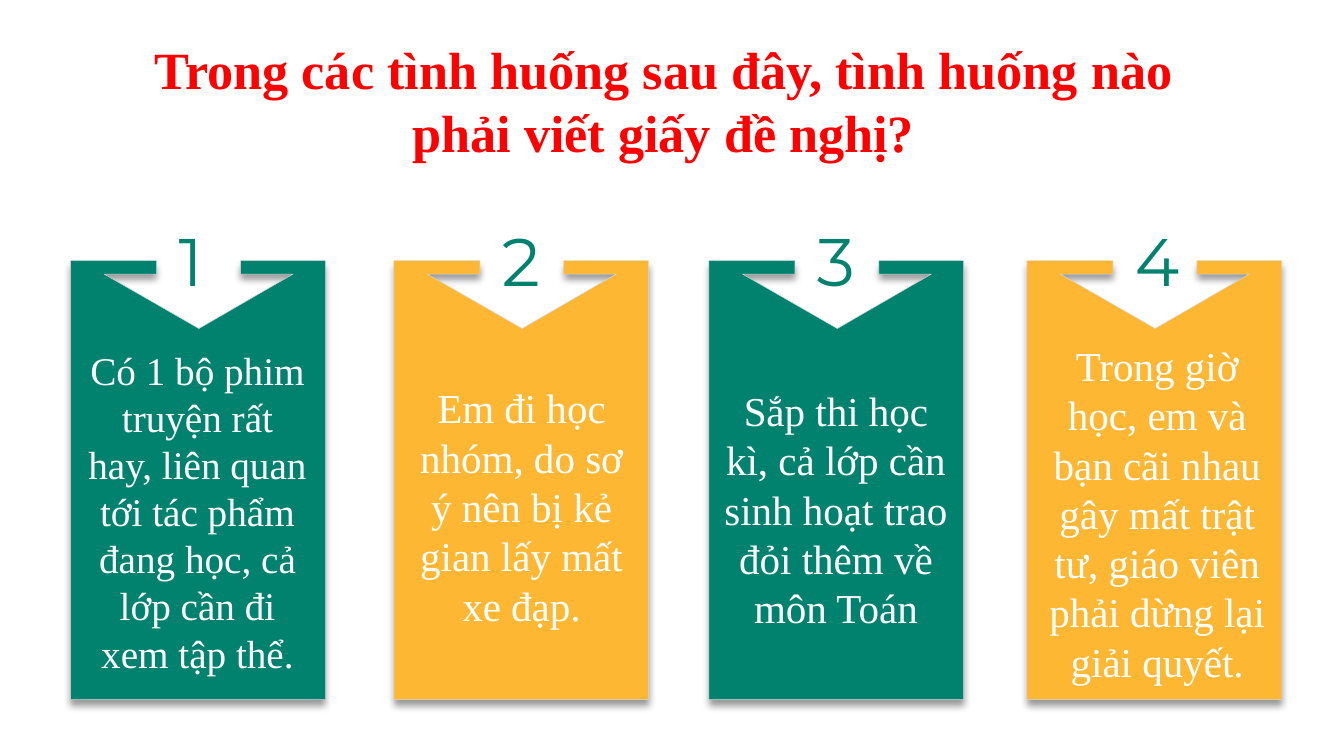
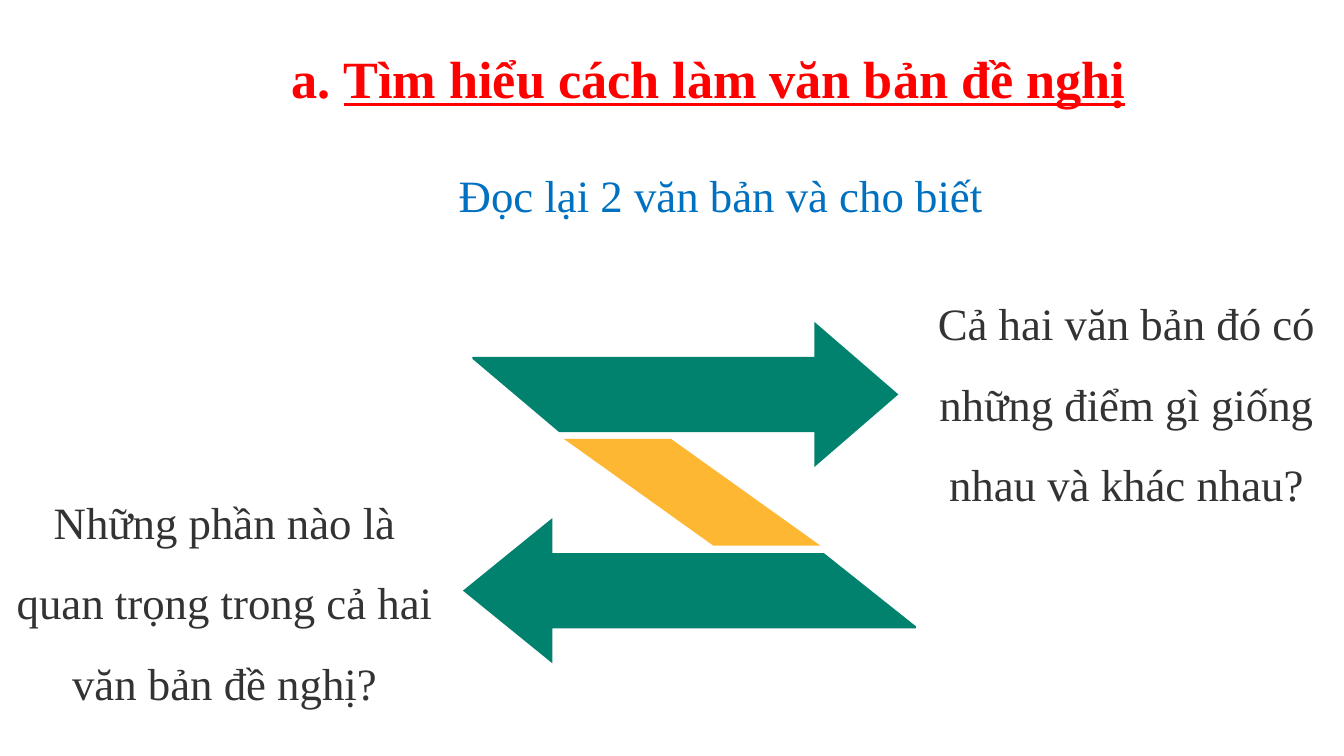
from lxml import etree
from pptx import Presentation
from pptx.dml.color import RGBColor
from pptx.enum.shapes import MSO_SHAPE
from pptx.enum.text import MSO_ANCHOR, MSO_AUTO_SIZE, PP_ALIGN
from pptx.oxml.ns import qn
from pptx.util import Pt

PX = 4572  # 200 px to the inch
CENTER, LEFT = PP_ALIGN.CENTER, PP_ALIGN.LEFT
TOP, FIT_SHAPE = MSO_ANCHOR.TOP, MSO_AUTO_SIZE.SHAPE_TO_FIT_TEXT
PARALLELOGRAM = MSO_SHAPE.PARALLELOGRAM
SERIF, SANS = "Times New Roman", "Montserrat"
GREEN, AMBER, RED, BLUE = "00826F", "FDB733", "FF0000", "0070C0"
WHITE, DARK, EDGE = "FFFFFF", "333333", "D7D7D7"
TITLE_STYLE = {"size": 28, "color": RED, "bold": True}

rgb = RGBColor.from_string


def write(box, area, runs, size, color, font=SERIF, align=CENTER, wrap=True, bold=False):
    """Place a text shape and fill its paragraph with (text, underlined) runs."""
    box.left, box.top, box.width, box.height = [n * PX for n in area]
    frame = box.text_frame
    frame.word_wrap, frame.auto_size, frame.vertical_anchor = wrap, FIT_SHAPE, TOP
    paragraph = frame.paragraphs[0]
    paragraph.alignment = align
    for text, underlined in runs:
        run = paragraph.add_run()
        run.text = text
        run.font.name, run.font.size, run.font.bold = font, Pt(size), bold
        run.font.color.rgb = rgb(color)
        if underlined:
            run.font.underline = True
    return paragraph


def draw_outline(slide, points, color):
    builder = slide.shapes.build_freeform(*points[0], scale=PX)
    builder.add_line_segments(points[1:], close=True)
    outline = builder.convert_to_shape()
    outline.shadow.inherit = False
    outline.fill.solid()
    outline.fill.fore_color.rgb = rgb(color)
    outline.line.fill.background()
    return outline


prs = Presentation()
prs.slide_width, prs.slide_height = 2000 * PX, 1125 * PX
title_only = prs.slide_layouts[5]

# Slide 1: four situations on notched cards
situations = prs.slides.add_slide(title_only)
write(situations.shapes.title, (135, 46, 1704, 208),
      [("Trong các tình huống sau đây, tình huống nào phải viết giấy đề nghị?", False)],
      **TITLE_STYLE)

CARD_OUTLINE = [(0, 388), (128, 388), (128, 408), (50, 408), (191, 489), (331, 408),
                (253, 408), (253, 388), (379, 388), (379, 1041), (0, 1041)]
cards = [  # card left, text area, text size, situation
    (105, (109, 506, 370, 514), 21,
     "Có 1 bộ phim truyện rất hay, liên quan tới tác phẩm đang học, cả lớp cần đi xem tập thể."),
    (586, (587, 560, 378, 390), 22,
     "Em đi học nhóm, do sơ ý nên bị kẻ gian lấy mất xe đạp."),
    (1055, (1058, 564, 372, 390), 22,
     "Sắp thi học kì, cả lớp cần sinh hoạt trao đỏi thêm về môn Toán"),
    (1528, (1535, 497, 374, 538), 22,
     "Trong giờ học, em và bạn cãi nhau gây mất trật tư, giáo viên phải dừng lại giải quyết."),
]
for number, (left, text_area, size, situation) in enumerate(cards, 1):
    card = draw_outline(situations, [(left + x, y) for x, y in CARD_OUTLINE],
                        GREEN if number % 2 else AMBER)
    card.line.color.rgb = rgb(EDGE)
    card.line.width = Pt(0.25)
    effects = card.element.spPr.find(qn("a:effectLst"))
    shadow = etree.SubElement(effects, qn("a:outerShdw"), blurRad=str(Pt(4)), dist=str(Pt(3)),
                              dir="5400000", algn="t", rotWithShape="0")
    shadow_color = etree.SubElement(shadow, qn("a:srgbClr"), val="000000")
    etree.SubElement(shadow_color, qn("a:alpha"), val="40000")

    write(situations.shapes.add_textbox(0, 0, 0, 0), (left + 141, 316, 96, 142),
          [(str(number), False)], 36, GREEN, font=SANS, align=LEFT, wrap=False)
    write(situations.shapes.add_textbox(0, 0, 0, 0), text_area,
          [(situation, False)], size, WHITE)

# Slide 2: two questions joined by a Z of arrows
questions = prs.slides.add_slide(title_only)
write(questions.shapes.title, (413, 59, 1282, 114),
      [("a. ", False), ("Tìm hiểu cách làm văn bản đề nghị", True)],
      wrap=False, **TITLE_STYLE)
write(questions.shapes.add_textbox(0, 0, 0, 0), (663, 240, 826, 100),
      [("Đọc lại 2 văn bản và cho biết", False)], 24, BLUE, align=LEFT, wrap=False)

diagonal = questions.shapes.add_shape(PARALLELOGRAM, 839 * PX, 653 * PX, 382 * PX, 159 * PX)
diagonal.adjustments[0] = 1.4
diagonal.element.spPr.xfrm.set("flipH", "1")
diagonal.shadow.inherit = False
diagonal.fill.solid()
diagonal.fill.fore_color.rgb = rgb(AMBER)
diagonal.line.fill.background()

right_arrow = [(1212, 479), (1337, 587), (1212, 695), (1212, 643),
               (832, 643), (703, 534), (703, 531), (1212, 531)]
left_arrow = [(822, 987), (689, 879), (822, 771), (822, 823),
              (1226, 823), (1363, 932), (1363, 935), (822, 935)]
for arrow in (right_arrow, left_arrow):
    draw_outline(questions, arrow, GREEN)

for area, question in [
    ((1361, 390, 630, 384), "Cả hai văn bản đó có những điểm gì giống nhau và khác nhau?"),
    ((0, 686, 668, 384), "Những phần nào là quan trọng trong cả hai văn bản đề nghị?"),
]:
    paragraph = write(questions.shapes.add_textbox(0, 0, 0, 0), area,
                      [(question, False)], 24, DARK)
    paragraph.line_spacing = 1.5
    paragraph.space_after = Pt(12)

prs.save("out.pptx")
